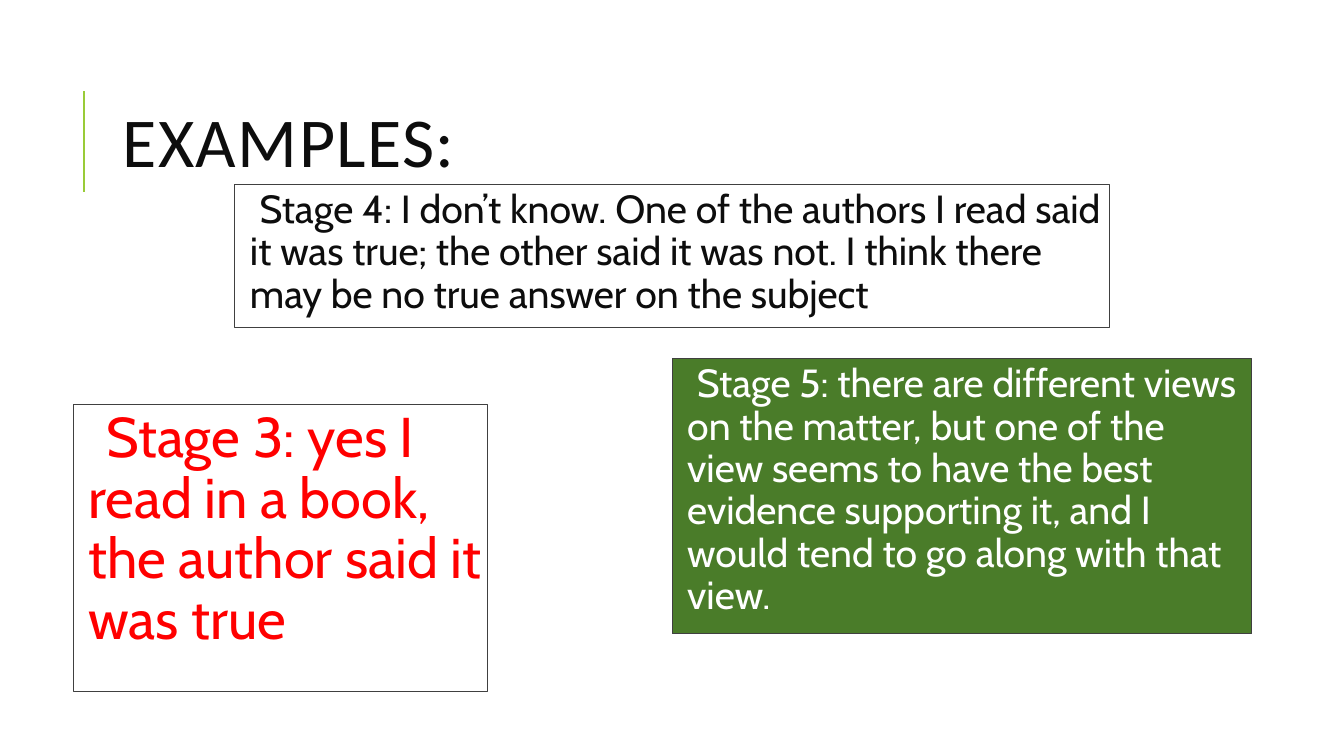
from dataclasses import dataclass
from typing import Optional

import pptx
import pptx.dml.color
import pptx.enum.shapes
import pptx.enum.text
import pptx.oxml
import pptx.oxml.ns
import pptx.slide
import pptx.util
from pptx.util import Cm

RGBColor = pptx.dml.color.RGBColor
LIME = RGBColor(0x99, 0xCB, 0x38)
GREEN = RGBColor(0x4A, 0x7C, 0x29)
RED = RGBColor(0xFF, 0x00, 0x00)
INK = RGBColor(0x0D, 0x0D, 0x0D)
GRAY = RGBColor(0x40, 0x40, 0x40)
WHITE = RGBColor(0xFF, 0xFF, 0xFF)
INSET = Cm(0.13)
INDENT = Cm(0.25)


@dataclass
class Stage:
    text: str
    left: float
    top: float
    width: float
    height: float
    size: int
    color: RGBColor
    fill: Optional[RGBColor] = None


STAGES = [
    Stage("Stage 3: yes I read in a book, the author said it was true",
          1.85, 10.19, 10.44, 7.24, 40, RED),
    Stage("Stage 4: I don’t know. One of the authors I read said it was true; "
          "the other said it was not. I think there may be no true answer on the subject",
          5.92, 4.65, 22.05, 3.61, 28, INK),
    Stage("Stage 5: there are different views on the matter, but one of the view "
          "seems to have the best evidence supporting it, and I would tend to go "
          "along with that view.",
          16.94, 9.04, 14.61, 6.93, 28, WHITE, GREEN),
]


def add_xml(parent, body: str) -> None:
    space = pptx.oxml.ns.nsdecls("a")
    parent.append(pptx.oxml.parse_xml(body.replace("/>", f" {space}/>", 1)
                                      if body.endswith("/>") and body.count("<") == 1
                                      else body.replace(">", f" {space}>", 1)))


def style(para, name: str, size: int, color: RGBColor, lines: float) -> None:
    para.alignment = pptx.enum.text.PP_ALIGN.LEFT
    para.line_spacing = lines
    para.font.name = name
    para.font.size = pptx.util.Pt(size)
    para.font.color.rgb = color


def add_title(slide: pptx.slide.Slide) -> None:
    title = slide.shapes.title
    title.left, title.top, title.width, title.height = Cm(2.84), Cm(1.63), Cm(27), Cm(4.17)
    frame = title.text_frame
    frame.text = "EXAMPLES:"
    frame.auto_size = pptx.enum.text.MSO_AUTO_SIZE.NONE
    frame.vertical_anchor = pptx.enum.text.MSO_ANCHOR.MIDDLE
    para = frame.paragraphs[0]
    style(para, "Calibri", 50, INK, 0.8)
    para.runs[0].font._element.set("spc", "100")


def add_rule(slide: pptx.slide.Slide) -> None:
    rule = slide.shapes.add_connector(
        pptx.enum.shapes.MSO_CONNECTOR.STRAIGHT, Cm(2.12), Cm(4.83), Cm(2.12), Cm(2.29))
    rule.line.color.rgb = LIME
    rule.line.width = pptx.util.Pt(1.5)
    add_xml(rule._element.spPr, "<a:effectLst/>")


def add_stage(slide: pptx.slide.Slide, stage: Stage) -> None:
    box = slide.shapes.add_shape(
        pptx.enum.shapes.MSO_SHAPE.RECTANGLE,
        Cm(stage.left), Cm(stage.top), Cm(stage.width), Cm(stage.height))
    box.shadow.inherit = False
    if stage.fill is None:
        box.fill.background()
    else:
        box.fill.solid()
        box.fill.fore_color.rgb = stage.fill
    box.line.color.rgb = GRAY
    box.line.width = pptx.util.Pt(0.75)

    frame = box.text_frame
    frame.word_wrap = True
    frame.vertical_anchor = pptx.enum.text.MSO_ANCHOR.TOP
    frame.margin_left = frame.margin_right = INSET
    frame.margin_top = frame.margin_bottom = INSET
    frame.text = stage.text
    para = frame.paragraphs[0]
    props = para._p.get_or_add_pPr()
    props.set("marL", str(INDENT))
    props.set("indent", str(-INDENT))
    add_xml(props, f'<a:buClr><a:srgbClr val="{LIME}"/></a:buClr>')
    add_xml(props, '<a:buChar char=" "/>')
    style(para, "Cabin", stage.size, stage.color, 0.9)
    para.space_after = pptx.util.Pt(2)


def main() -> None:
    deck = pptx.Presentation()
    deck.slide_width, deck.slide_height = Cm(33.87), Cm(19.05)
    slide = deck.slides.add_slide(deck.slide_layouts.get_by_name("Title Only"))
    add_rule(slide)
    add_title(slide)
    for stage in STAGES:
        add_stage(slide, stage)
    deck.save("out.pptx")


if __name__ == "__main__":
    main()
